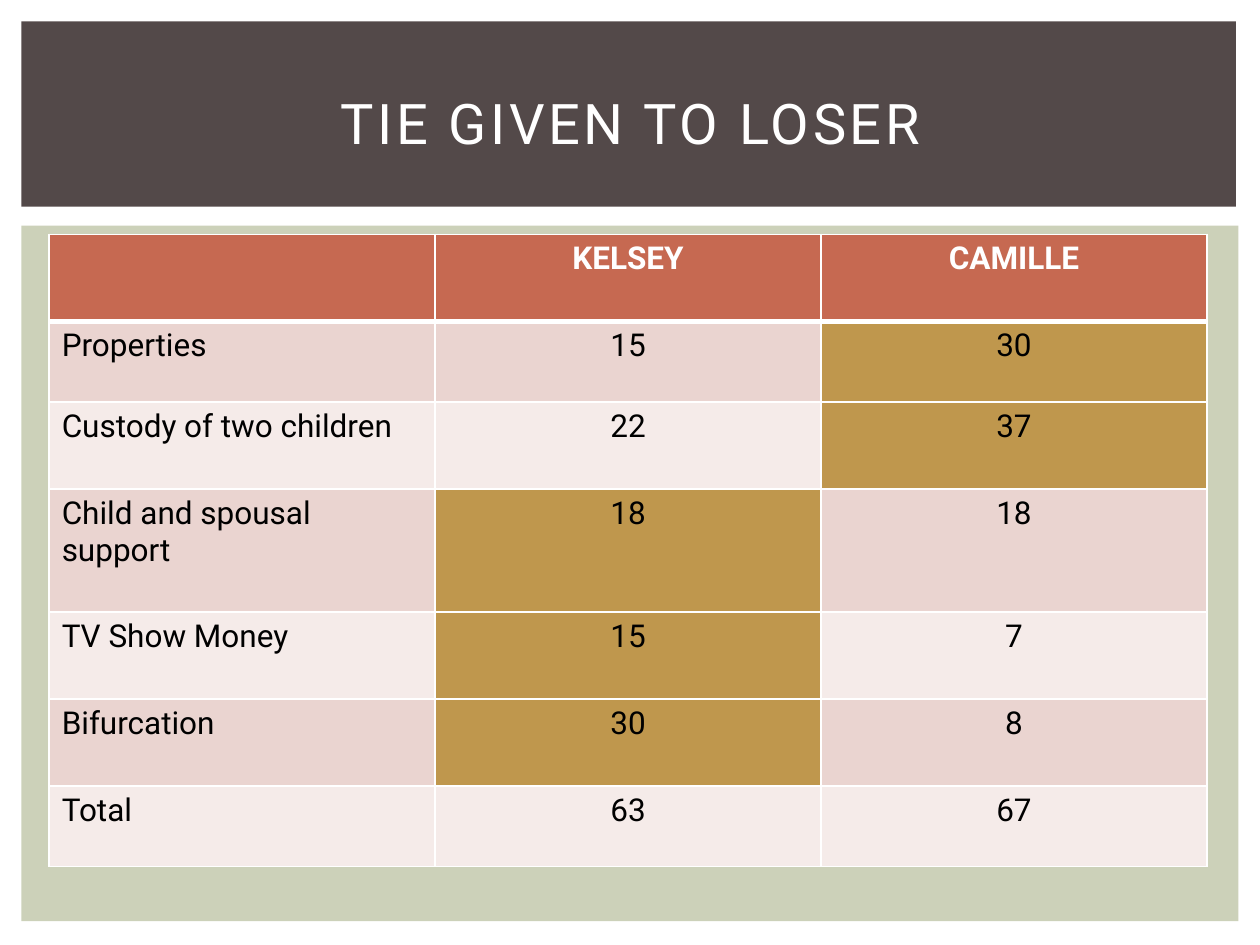
from lxml import etree
from pptx import Presentation
from pptx import util as u
from pptx.dml.color import RGBColor
from pptx.enum import shapes, text
from pptx.oxml.ns import qn

COLORS = {
    "white": "FFFFFF", "black": "000000", "banner": "534949", "panel": "CCD1B9",
    "header": "C66951", "band_dark": "EAD4D0", "band_light": "F5EBE9",
    "winner": "BF974D",
}
WIDTH, HEIGHT = 10, 7.5

HEADINGS = ["", "KELSEY", "CAMILLE"]
# Item, Kelsey's points, Camille's points, column of the winner (0 for none)
ITEMS = [
    ("Properties", 15, 30, 2),
    ("Custody of two children", 22, 37, 2),
    ("Child and spousal support", 18, 18, 1),
    ("TV Show Money", 15, 7, 1),
    ("Bifurcation", 30, 8, 1),
    ("Total", 63, 67, 0),
]
ROW_HEIGHTS = [0.69, 0.64, 0.69, 0.98, 0.69, 0.69, 0.64]


def color(name):
    return RGBColor.from_string(COLORS[name])


def write(frame, words, size=18, ink="black", bold=False, centred=True, spacing=0):
    paragraph = frame.paragraphs[0]
    paragraph.alignment = text.PP_ALIGN.CENTER if centred else text.PP_ALIGN.LEFT
    run = paragraph.add_run()
    run.text = words
    run.font.name, run.font.size, run.font.bold = "Roboto", u.Pt(size), bold
    run.font.color.rgb = color(ink)
    if spacing:
        run.font._element.set("spc", str(spacing * 100))


class Deck:
    """Holds the style and the current slide; places are shares of its size."""

    def __init__(self):
        self.deck = Presentation()
        self.deck.slide_width, self.deck.slide_height = u.Inches(WIDTH), u.Inches(HEIGHT)
        self.slide = self.deck.slides.add_slide(self.deck.slide_layouts[6])

    def place(self, left, top, width, height):
        return [u.Inches(share * side) for share, side in
                zip((left, top, width, height), (WIDTH, HEIGHT) * 2)]

    def block(self, fill, *shares):
        block = self.slide.shapes.add_shape(
            shapes.MSO_SHAPE.RECTANGLE, *self.place(*shares))
        block.shadow.inherit = False
        block.fill.solid()
        block.fill.fore_color.rgb = color(fill)
        block.line.fill.background()

    def title(self, words, *shares):
        frame = self.slide.shapes.add_textbox(*self.place(*shares)).text_frame
        frame.word_wrap = True
        frame.vertical_anchor = text.MSO_ANCHOR.MIDDLE
        write(frame, words, size=32, ink="white", spacing=2)

    def cell(self, cell, fill, words, top=1, bottom=1, **style):
        properties = cell._tc.get_or_add_tcPr()
        for side, points in zip("LRTB", (1, 1, top, bottom)):
            line = etree.SubElement(properties, qn(f"a:ln{side}"), w=str(u.Pt(points)))
            paint = etree.SubElement(line, qn("a:solidFill"))
            etree.SubElement(paint, qn("a:srgbClr"), val=COLORS["white"])
        cell.fill.solid()
        cell.fill.fore_color.rgb = color(fill)
        if words:
            write(cell.text_frame, words, **style)

    def table(self, headings, items, row_heights, *shares):
        table = self.slide.shapes.add_table(
            len(items) + 1, len(headings), *self.place(*shares)).table
        for row, height in zip(table.rows, row_heights):
            row.height = u.Inches(height)
        for column, heading in enumerate(headings):
            self.cell(table.cell(0, column), "header", heading,
                      bottom=3, ink="white", bold=True)
        for row, (*values, winner) in enumerate(items, 1):
            band = "band_dark" if row % 2 else "band_light"
            for column, value in enumerate(values):
                won = winner and column == winner
                self.cell(table.cell(row, column), "winner" if won else band,
                          str(value), top=3 if row == 1 else 1, centred=column > 0)


def main():
    deck = Deck()
    # Background panel and title banner
    deck.block("panel", 0.017, 1.79 / HEIGHT, 0.966, 5.52 / HEIGHT)
    deck.block("banner", 0.017, 0.17 / HEIGHT, 0.964, 1.47 / HEIGHT)
    deck.title("TIE GIVEN TO LOSER", 0.042, 0.39 / HEIGHT, 0.917, 1.15 / HEIGHT)
    # Points table with each item's winner highlighted
    deck.table(HEADINGS, ITEMS, ROW_HEIGHTS,
               0.039, 1.86 / HEIGHT, 0.919, sum(ROW_HEIGHTS) / HEIGHT)
    deck.deck.save("out.pptx")


if __name__ == "__main__":
    main()
